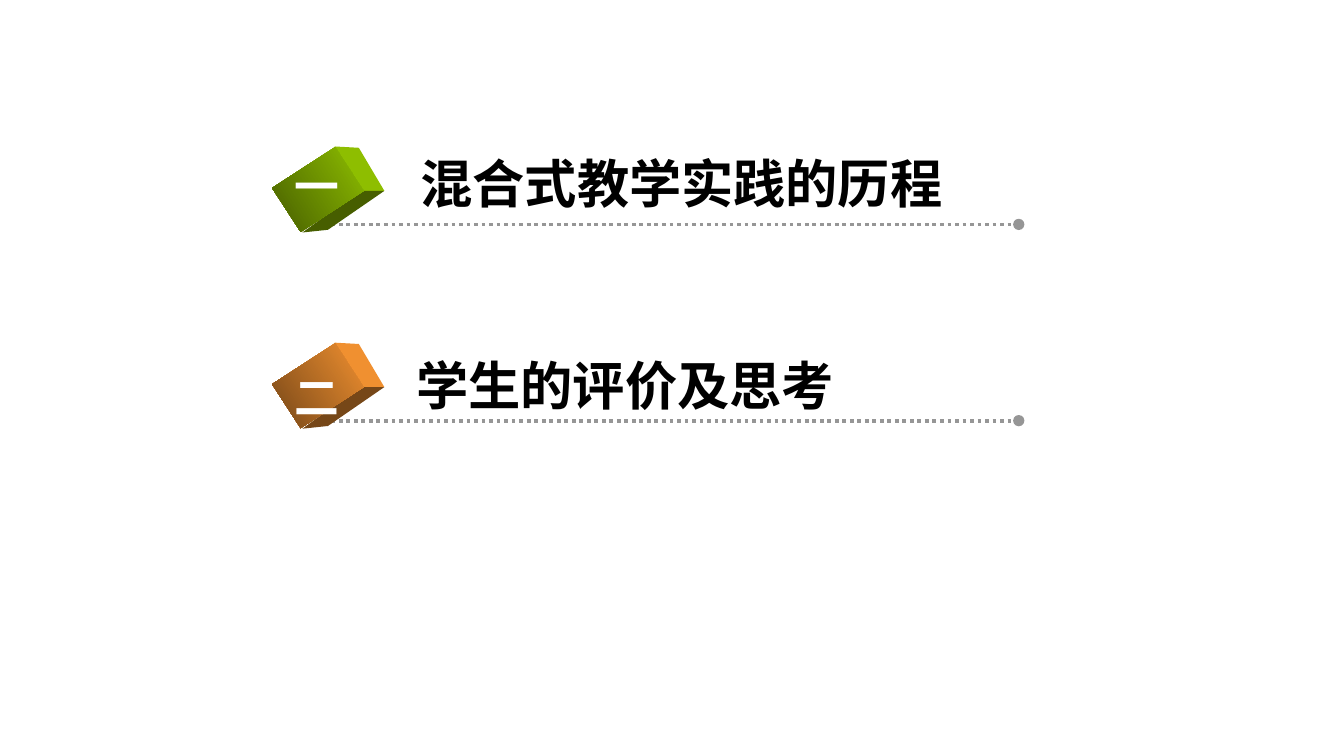
from dataclasses import dataclass

from lxml.etree import SubElement
from pptx import Presentation
from pptx.dml.color import RGBColor
from pptx.enum.dml import MSO_LINE
from pptx.enum.shapes import MSO_CONNECTOR, MSO_SHAPE
from pptx.enum.text import MSO_AUTO_SIZE, PP_ALIGN
from pptx.oxml.ns import qn
from pptx.util import Inches, Pt


@dataclass(frozen=True)
class Theme:
    title_font: str = "Noto Sans CJK SC"
    numeral_font: str = "Arial"
    title_size: int = 28
    numeral_size: int = 24
    title_color: str = "000000"
    numeral_color: str = "FFFFFF"
    rule_color: str = "969696"


@dataclass(frozen=True)
class Chapter:
    numeral: str
    title: str
    light: str
    dark: str
    title_at: tuple  # left, top within the row
    title_width: float
    numeral_top: float


THEME = Theme()
ROW_LEFT, ROW_TOP, ROW_STEP = 2.09, 1.08, 1.46
CHAPTERS = (
    Chapter("一", "混合式教学实践的历程", "8EBE00", "475E00", (0.94, 0), 4.15, 0.05),
    Chapter("二", "学生的评价及思考", "F09030", "764718", (0.91, 0.04), 3.36, 0.16),
)
# Cube faces, as corner offsets from the top left of the row
RIGHT_FACE = ((0.4, 0.01), (0.58, 0.02), (0.77, 0.34), (0.59, 0.34))
BOTTOM_FACE = ((0.59, 0.34), (0.77, 0.34), (0.35, 0.63), (0.16, 0.65))


def rgb(value):
    return RGBColor.from_string(value)


def add_text(page, box, text, font, size, color, align):
    left, top, width, height = map(Inches, box)
    label = page.shapes.add_textbox(left, top, width, height)
    frame = label.text_frame
    frame.word_wrap = False
    frame.auto_size = MSO_AUTO_SIZE.SHAPE_TO_FIT_TEXT
    para = frame.paragraphs[0]
    para.alignment = align
    span = para.add_run()
    span.text = text
    span.font.name = font
    span.font.size = Pt(size)
    span.font.bold = True
    span.font.color.rgb = rgb(color)
    if font == THEME.title_font:
        SubElement(span.font._element, qn("a:ea"), typeface=font)


def add_rule(page, left, top, width):
    """Dotted line with a round end."""
    rule = page.shapes.add_connector(
        MSO_CONNECTOR.STRAIGHT, Inches(left), Inches(top), Inches(left + width), Inches(top)
    )
    rule.line.width = Pt(2)
    rule.line.color.rgb = rgb(THEME.rule_color)
    rule.line.dash_style = MSO_LINE.ROUND_DOT
    SubElement(rule.line._get_or_add_ln(), qn("a:tailEnd"), type="oval")
    SubElement(rule._element.spPr, qn("a:effectLst"))


def add_face(page, left, top, corners, color):
    points = [(Inches(left + x), Inches(top + y)) for x, y in corners]
    builder = page.shapes.build_freeform(*points[0])
    builder.add_line_segments(points[1:], close=True)
    face = builder.convert_to_shape()
    face.shadow.inherit = False
    face.fill.solid()
    face.fill.fore_color.rgb = rgb(color)
    face.line.fill.background()


def add_cube(page, left, top, light, dark):
    add_face(page, left, top, RIGHT_FACE, light)
    add_face(page, left, top, BOTTOM_FACE, dark)
    front = page.shapes.add_shape(
        MSO_SHAPE.RECTANGLE, Inches(left + 0.08), Inches(top + 0.05), Inches(0.39), Inches(0.56)
    )
    front.rotation = 57
    front.shadow.inherit = False
    front.line.fill.background()
    front.fill.gradient()
    front.fill.gradient_angle = 270
    for stop, color, position in zip(front.fill.gradient_stops, (light, dark), (0, 1)):
        stop.color.rgb = rgb(color)
        stop.position = position


def add_chapter(page, left, top, chapter):
    add_rule(page, left + 0.32, top + 0.59, 5.17)
    add_cube(page, left, top, chapter.light, chapter.dark)
    add_text(
        page, (left, top + chapter.numeral_top, 0.54, 0.51), chapter.numeral,
        THEME.numeral_font, THEME.numeral_size, THEME.numeral_color, PP_ALIGN.CENTER,
    )
    title_left, title_top = chapter.title_at
    add_text(
        page, (left + title_left, top + title_top, chapter.title_width, 0.57), chapter.title,
        THEME.title_font, THEME.title_size, THEME.title_color, PP_ALIGN.LEFT,
    )


def main():
    deck = Presentation()
    deck.slide_width = Inches(10)
    deck.slide_height = Inches(10 * 9 / 16)
    page = deck.slides.add_slide(deck.slide_layouts[6])
    for index, chapter in enumerate(CHAPTERS):
        add_chapter(page, ROW_LEFT, ROW_TOP + index * ROW_STEP, chapter)
    deck.save("out.pptx")


if __name__ == "__main__":
    main()
